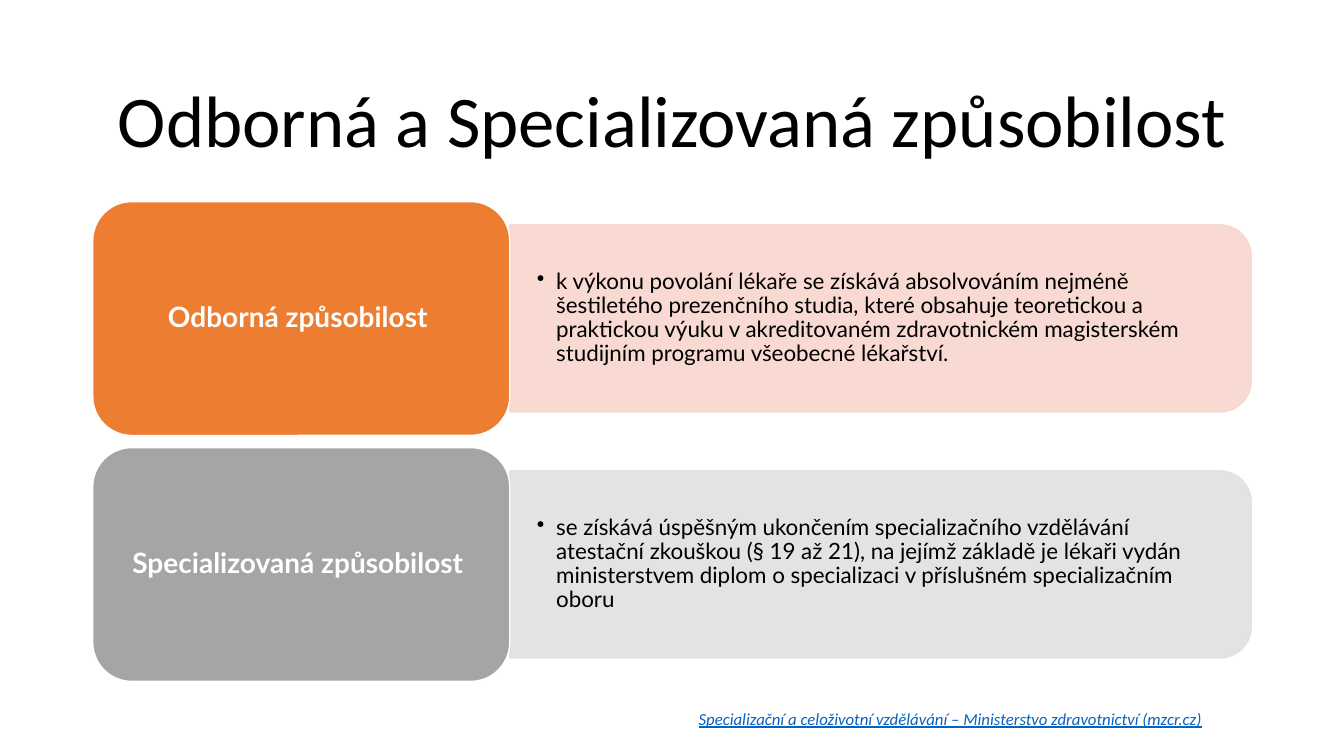
from lxml import etree
from pptx import Presentation
from pptx.dml.color import RGBColor
from pptx.enum import shapes, text
from pptx.oxml import ns
from pptx.util import Inches, Pt

BLACK = RGBColor(0x00, 0x00, 0x00)
WHITE = RGBColor(0xFF, 0xFF, 0xFF)
ORANGE = RGBColor(0xED, 0x7D, 0x31)
PEACH = RGBColor(0xF8, 0xD7, 0xCE)
GRAY = RGBColor(0xA5, 0xA5, 0xA5)
SILVER = RGBColor(0xE1, 0xE1, 0xE1)
LINK_BLUE = RGBColor(0x05, 0x63, 0xC1)

TITLE = "Odborná a Specializovaná způsobilost"
COMPETENCES = [
    ("Odborná způsobilost ",
     "k výkonu povolání lékaře se získává absolvováním nejméně šestiletého "
     "prezenčního studia, které obsahuje teoretickou a praktickou výuku "
     "v akreditovaném zdravotnickém magisterském studijním programu "
     "všeobecné lékařství.", ORANGE, PEACH),
    ("Specializovaná způsobilost ",
     "se získává úspěšným ukončením specializačního vzdělávání atestační "
     "zkouškou (§ 19 až 21), na jejímž základě je lékaři vydán ministerstvem "
     "diplom o specializaci v příslušném specializačním oboru", GRAY, SILVER),
]
SOURCE = "Specializační a celoživotní vzdělávání – Ministerstvo zdravotnictví (mzcr.cz)"

WIDTH, HEIGHT = 13.33, 7.5
MARGIN = 0.92
CONTENT = WIDTH - 2 * MARGIN
LABEL_W = 0.36 * CONTENT
DETAIL_W = CONTENT - LABEL_W
TOP, ROW_H, GAP = 2, 2.32, 0.12
DETAIL_H = 0.8 * ROW_H
SOURCE_X = 6.83


def write(shape, content, size, font="Calibri", color=BLACK, bold=None, italic=None,
          underline=None, align=None, spacing=None, insets=(0.1, 0.05),
          anchor=text.MSO_ANCHOR.MIDDLE, bullet=False):
    """Fill a shape with one formatted paragraph."""
    frame = shape.text_frame
    frame.word_wrap = True
    frame.vertical_anchor = anchor
    frame.margin_left = frame.margin_right = Inches(insets[0])
    frame.margin_top = frame.margin_bottom = Inches(insets[1])
    paragraph = frame.paragraphs[0]
    paragraph.alignment = align
    paragraph.line_spacing = spacing
    run = paragraph.add_run()
    run.text = content
    run.font.name, run.font.size = font, Pt(size)
    run.font.bold, run.font.italic, run.font.underline = bold, italic, underline
    run.font.color.rgb = color
    if bullet:
        paragraph.level = 1
        props = paragraph._p.get_or_add_pPr()
        props.set("marL", str(Inches(0.19)))
        props.set("indent", str(-Inches(0.19)))
        etree.SubElement(props, ns.qn("a:buChar")).set("char", "•")


def add_text(slide, left, top, width, height, content, size, **style):
    """Add a text box at a place given in inches."""
    box = slide.shapes.add_textbox(*map(Inches, (left, top, width, height)))
    write(box, content, size, **style)


def add_panel(slide, kind, left, top, width, height, fill, line):
    """Add a filled shape with a thin outline."""
    panel = slide.shapes.add_shape(kind, *map(Inches, (left, top, width, height)))
    panel.shadow.inherit = False
    panel.fill.solid()
    panel.fill.fore_color.rgb = fill
    panel.line.color.rgb = line
    panel.line.width = Pt(1)
    return panel


def add_competence(slide, top, label, detail, strong, pale):
    """Add one row: a label block and its bulleted detail."""
    middle = top + ROW_H / 2
    detail_x = MARGIN + LABEL_W
    back = add_panel(slide, shapes.MSO_SHAPE.ROUND_2_SAME_RECTANGLE,
                     detail_x + (DETAIL_W - DETAIL_H) / 2, middle - DETAIL_W / 2,
                     DETAIL_H, DETAIL_W, pale, pale)
    back.rotation = 90
    for color in back._element.spPr.iter(ns.qn("a:srgbClr")):
        etree.SubElement(color, ns.qn("a:alpha")).set("val", "90000")
    add_text(slide, detail_x, middle - DETAIL_H / 2, DETAIL_W - 0.09, DETAIL_H,
             detail, 16, font="Lato", spacing=0.9, insets=(0.27, 0.14), bullet=True)
    block = add_panel(slide, shapes.MSO_SHAPE.ROUNDED_RECTANGLE,
                      MARGIN, top, LABEL_W, ROW_H, strong, WHITE)
    write(block, label, 20, font="Lato", color=WHITE, bold=True, spacing=0.9,
          align=text.PP_ALIGN.CENTER, insets=(0.08, 0.04))


def main():
    """Build and save the slide."""
    deck = Presentation()
    deck.slide_width, deck.slide_height = Inches(WIDTH), Inches(HEIGHT)
    slide = deck.slides.add_slide(deck.slide_layouts[6])
    add_text(slide, MARGIN, 0.61, CONTENT, 1.24, TITLE, 52,
             align=text.PP_ALIGN.CENTER, spacing=0.9)
    for row, competence in enumerate(COMPETENCES):
        add_competence(slide, TOP + row * (ROW_H + GAP), *competence)
    add_text(slide, SOURCE_X, 6.98, WIDTH - MARGIN - SOURCE_X, 0.3, SOURCE, 12,
             color=LINK_BLUE, italic=True, underline=True, anchor=text.MSO_ANCHOR.TOP)
    deck.save("out.pptx")


if __name__ == "__main__":
    main()
